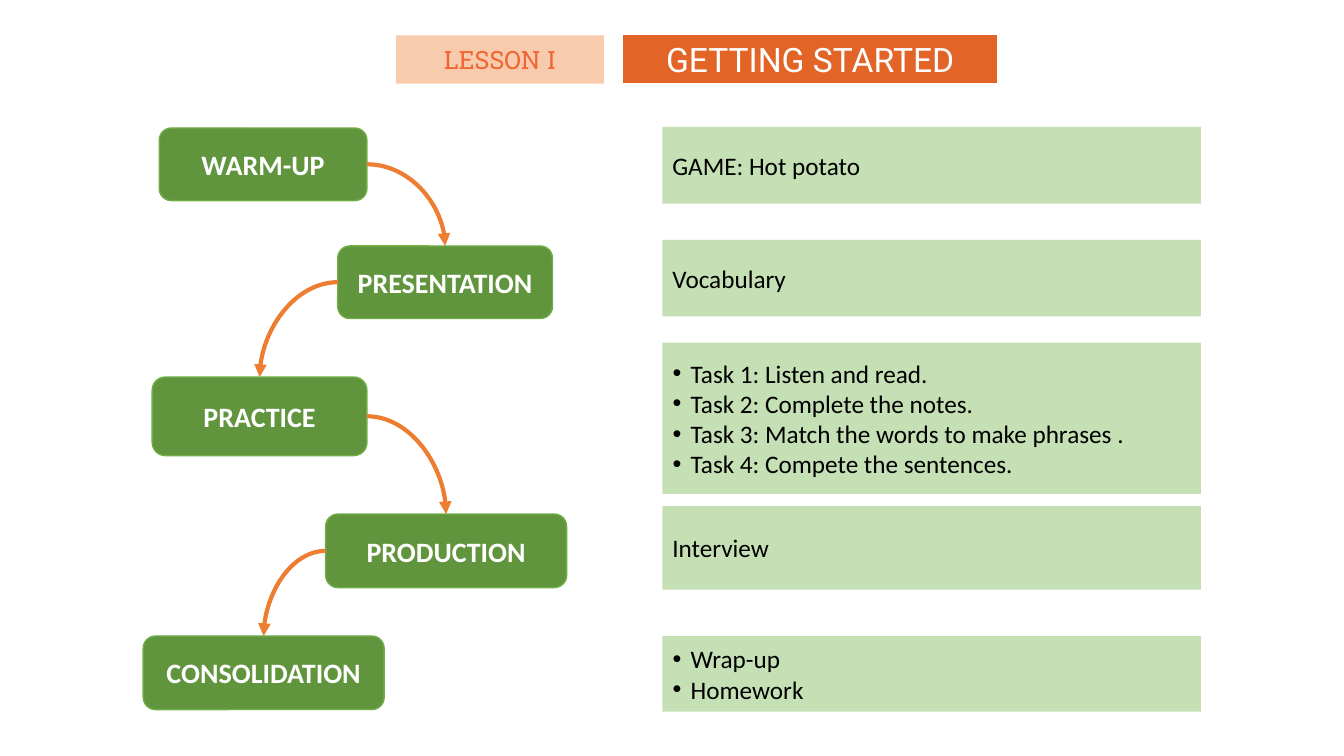
from lxml.etree import SubElement
from pptx import Presentation
from pptx.dml.color import RGBColor
from pptx.enum.shapes import MSO_CONNECTOR as Link, MSO_SHAPE as Shape
from pptx.enum.text import MSO_ANCHOR as Anchor, MSO_AUTO_SIZE as Fit, PP_ALIGN as Align
from pptx.oxml.ns import qn
from pptx.util import Pt

PX = 9144
WHITE = RGBColor(0xFF, 0xFF, 0xFF)
BLACK = RGBColor(0, 0, 0)
GREEN = RGBColor(0x61, 0x95, 0x3D)
EDGE = RGBColor(0x70, 0xAD, 0x47)
PALE = RGBColor(0xC5, 0xE0, 0xB4)
ARROW = RGBColor(0xED, 0x7D, 0x31)
RUST = RGBColor(0xE3, 0x64, 0x27)
PEACH = RGBColor(0xF8, 0xCB, 0xAD)
CORAL = RGBColor(0xF2, 0x65, 0x32)
TOP, LEFT, RIGHT = 0, 1, 3

STAGES = [
    ("WARM-UP", (158, 127, 206, 72)),
    ("PRESENTATION", (335, 244, 213, 72)),
    ("PRACTICE", (151, 374, 213, 78)),
    ("PRODUCTION", (323, 510, 239, 73)),
    ("CONSOLIDATION", (142, 631, 239, 73)),
]
NOTES = [
    ("GAME: Hot potato", 126, 76),
    ("Vocabulary", 238, 76),
    ("Interview", 502, 83),
]
LISTS = [
    (["Task 1: Listen and read.", "Task 2: Complete the notes.",
      "Task 3: Match the words to make phrases .",
      "Task 4: Compete the sentences."], 340, 150),
    (["Wrap-up", "Homework"], 631, 75),
]


def place(shape, at, fill, edge=None, width=1):
    shape.left, shape.top, shape.width, shape.height = [n * PX for n in at]
    shape.fill.solid()
    shape.fill.fore_color.rgb = fill
    if edge is None:
        shape.line.fill.background()
    else:
        shape.line.color.rgb = edge
        shape.line.width = Pt(width)


def write(shape, text, size, color, face="Calibri", bold=False, align=Align.CENTER):
    frame = shape.text_frame
    frame.text = text
    frame.word_wrap = True
    frame.auto_size = Fit.NONE
    frame.vertical_anchor = Anchor.MIDDLE
    for para in frame.paragraphs:
        para.alignment = align
        para.space_before = Pt(0)
        for run in para.runs:
            font = run.font
            font.name, font.size, font.bold = face, Pt(size), bold
            font.color.rgb = color


def add_box(slide, kind, at, fill, edge=None):
    box = slide.shapes.add_shape(kind, 0, 0, PX, PX)
    box.shadow.inherit = False
    place(box, at, fill, edge)
    return box


def add_stage(slide, text, at):
    stage = add_box(slide, Shape.ROUNDED_RECTANGLE, at, GREEN, EDGE)
    write(stage, text, 20, WHITE, bold=True)
    return stage


def add_note(slide, text, top, height):
    note = add_box(slide, Shape.RECTANGLE, (657, top, 534, height), PALE)
    write(note, text, 18, BLACK, align=Align.LEFT)


def fill_list(body, items, top, height):
    place(body, (657, top, 534, height), PALE)
    write(body, "\n".join(items), 18, BLACK, align=Align.LEFT)
    for para in body.text_frame.paragraphs:
        props = para._p.get_or_add_pPr()
        props.set("marL", str(18 * PX))
        props.set("indent", str(-18 * PX))
        SubElement(props, qn("a:buFont")).set("typeface", "Arial")
        SubElement(props, qn("a:buChar")).set("char", "•")


def add_arrow(slide, start, end):
    side = RIGHT if start.left < end.left else LEFT
    arrow = slide.shapes.add_connector(Link.CURVE, 0, 0, PX, PX)
    arrow.begin_connect(start, side)
    arrow.end_connect(end, TOP)
    arrow.line.color.rgb = ARROW
    arrow.line.width = Pt(3)
    props = arrow._element.spPr
    props.find(qn("a:prstGeom")).set("prst", "curvedConnector2")
    SubElement(props.find(qn("a:ln")), qn("a:tailEnd")).set("type", "triangle")
    SubElement(props, qn("a:effectLst"))


def main():
    deck = Presentation()
    deck.slide_width, deck.slide_height = 1333 * PX, 750 * PX
    slide = deck.slides.add_slide(deck.slide_layouts[3])
    title, *bodies = slide.placeholders

    place(title, (617, 34, 373, 49), RUST, WHITE, 1.5)
    write(title, "GETTING STARTED", 24, WHITE, "Roboto")
    lesson = add_box(slide, Shape.RECTANGLE, (393, 35, 206, 48), PEACH)
    write(lesson, "LESSON I", 18, CORAL, "Roboto Slab")

    stages = [add_stage(slide, *stage) for stage in STAGES]
    for start, end in zip(stages, stages[1:]):
        add_arrow(slide, start, end)
    for note in NOTES:
        add_note(slide, *note)
    for body, items in zip(bodies, LISTS):
        fill_list(body, *items)
    deck.save("out.pptx")


if __name__ == "__main__":
    main()
